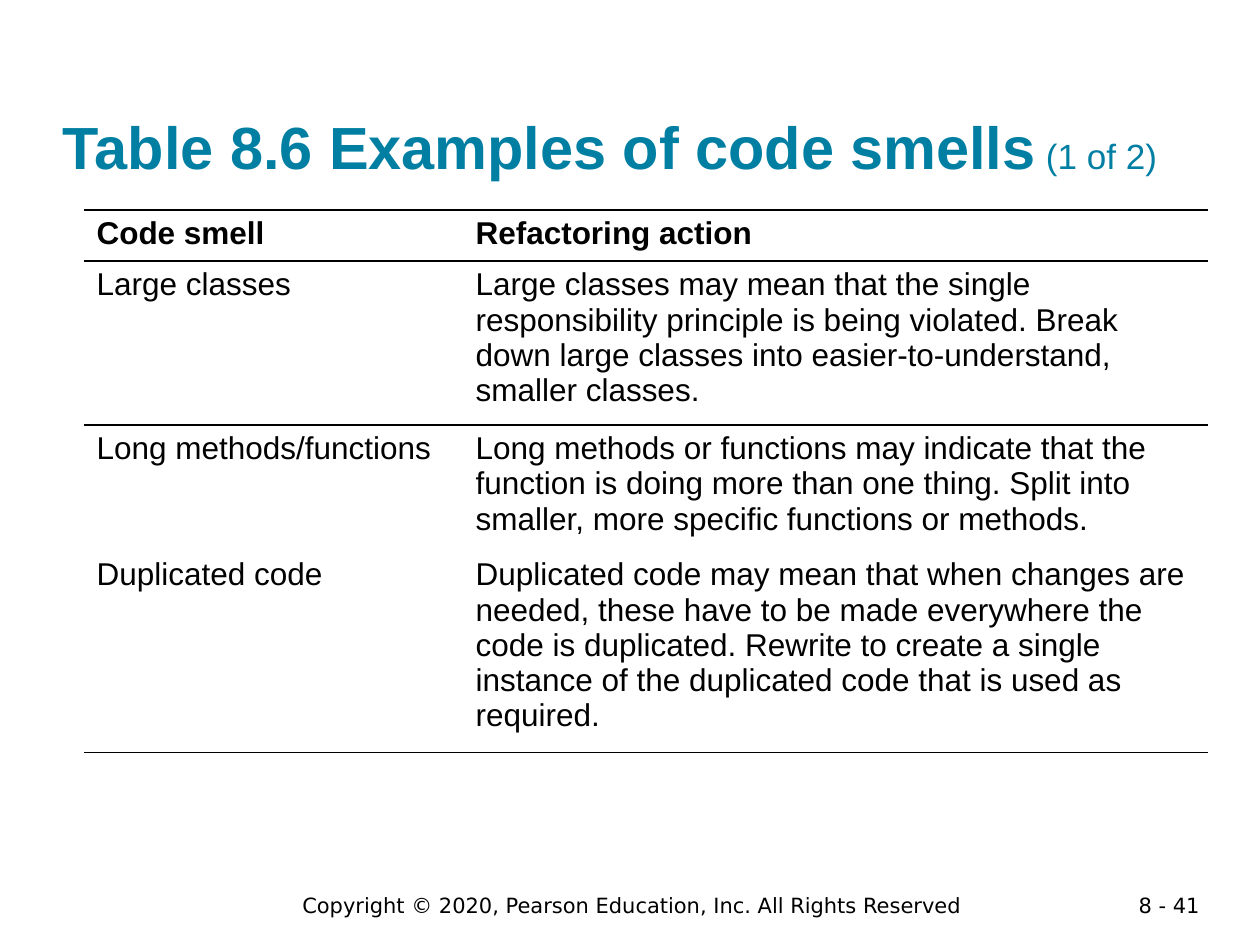
"""Build the slide with the table of code smells."""
from dataclasses import dataclass

from lxml import etree
from pptx import Presentation
from pptx import util as u
from pptx.dml.color import RGBColor
from pptx.enum import text
from pptx.oxml.ns import qn


@dataclass(frozen=True)
class Theme:
    """Colours, fonts and type sizes of the slide."""
    title: str = "007FA3"
    ink: str = "000000"
    body_font: str = "Arial"
    footer_font: str = "DejaVu Sans"
    title_size: int = 34
    part_size: int = 20
    table_size: int = 18
    footer_size: int = 12
    rule_width: int = 1


THEME = Theme()
EMU_PER_PX = 914400 / 126
COLUMN_WIDTHS = (379, 745)
ROW_HEIGHTS = (51, 154, 120, 188)
RULED_BOUNDARIES = {0, 1, 2, 4}
ROWS = (
    ("Code smell", "Refactoring action"),
    ("Large classes",
     "Large classes may mean that the single responsibility principle is being violated. "
     "Break down large classes into easier-to-understand, smaller classes."),
    ("Long methods/functions",
     "Long methods or functions may indicate that the function is doing more than one thing. "
     "Split into smaller, more specific functions or methods."),
    ("Duplicated code",
     "Duplicated code may mean that when changes are needed, these have to be made everywhere "
     "the code is duplicated. Rewrite to create a single instance of the duplicated code that "
     "is used as required."),
)


def px(length):
    """Turn a length in px into EMU."""
    return u.Emu(round(length * EMU_PER_PX))


def write(paragraph, content, size, font=THEME.body_font, color=THEME.ink, bold=False):
    """Add a formatted run of text to a paragraph."""
    run = paragraph.add_run()
    run.text = content
    run.font.name = font
    run.font.size = u.Pt(size)
    run.font.bold = bold
    run.font.color.rgb = RGBColor.from_string(color)


def add_box(slide, left, top, width, height, align=text.PP_ALIGN.LEFT):
    """Add a wrapping text box and return its frame."""
    frame = slide.shapes.add_textbox(px(left), px(top), px(width), px(height)).text_frame
    frame.word_wrap = True
    frame.paragraphs[0].alignment = align
    return frame


def add_title(slide):
    """Add the title with its lighter part number."""
    frame = add_box(slide, 63, 30, 1134, 151)
    frame.vertical_anchor = text.MSO_ANCHOR.BOTTOM
    frame.margin_left = frame.margin_right = frame.margin_top = frame.margin_bottom = 0
    paragraph = frame.paragraphs[0]
    write(paragraph, "Table 8.6 Examples of code smells", THEME.title_size,
          color=THEME.title, bold=True)
    write(paragraph, " ", THEME.part_size, color=THEME.title, bold=True)
    write(paragraph, "(1 of 2)", THEME.part_size, color=THEME.title)


def set_borders(cell, ruled_sides):
    """Draw a rule on the given sides of a cell and clear the others."""
    properties = cell._tc.get_or_add_tcPr()
    for position, side in enumerate("LRTB"):
        line = etree.Element(qn(f"a:ln{side}"), w=str(u.Pt(THEME.rule_width)))
        if side in ruled_sides:
            fill = etree.SubElement(line, qn("a:solidFill"))
            etree.SubElement(fill, qn("a:srgbClr"), val=THEME.ink)
        else:
            etree.SubElement(line, qn("a:noFill"))
        properties.insert(position, line)


def add_smell_table(slide):
    """Add the table of smells and refactoring actions."""
    table = slide.shapes.add_table(
        len(ROWS), len(COLUMN_WIDTHS), px(84), px(210),
        px(sum(COLUMN_WIDTHS)), px(sum(ROW_HEIGHTS))).table
    table.horz_banding = False
    for column, width in zip(table.columns, COLUMN_WIDTHS):
        column.width = px(width)
    for index, (row, height, contents) in enumerate(zip(table.rows, ROW_HEIGHTS, ROWS)):
        row.height = px(height)
        sides = {side for side, boundary in (("T", index), ("B", index + 1))
                 if boundary in RULED_BOUNDARIES}
        for cell, content in zip(row.cells, contents):
            cell.fill.background()
            set_borders(cell, sides)
            write(cell.text_frame.paragraphs[0], content, THEME.table_size, bold=index == 0)


def add_footer(slide, content, left, width, height, align):
    """Add one piece of the footer line."""
    frame = add_box(slide, left, 886, width, height, align)
    write(frame.paragraphs[0], content, THEME.footer_size, font=THEME.footer_font)


def main():
    """Build and save the slide."""
    presentation = Presentation()
    presentation.slide_width, presentation.slide_height = px(1260), px(945)
    slide = presentation.slides.add_slide(presentation.slide_layouts[6])
    add_footer(slide, "8 - 41", 1086, 126, 28, text.PP_ALIGN.RIGHT)
    add_footer(slide, "Copyright © 2020, Pearson Education, Inc. All Rights Reserved",
               207, 850, 38, text.PP_ALIGN.CENTER)
    add_smell_table(slide)
    add_title(slide)
    presentation.save("out.pptx")


if __name__ == "__main__":
    main()
